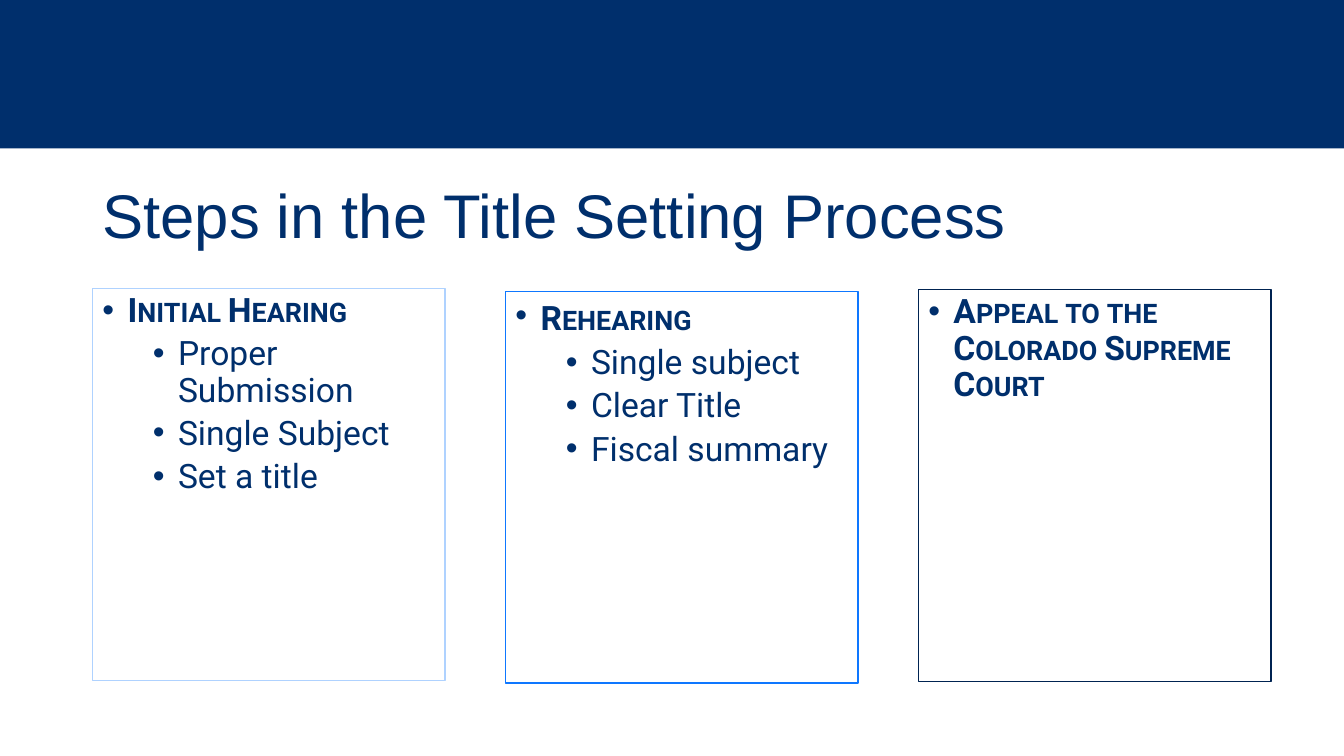
"""Build the slide on the steps in the title setting process."""
from lxml.etree import SubElement
from pptx import Presentation
from pptx.dml.color import RGBColor
from pptx.enum.shapes import MSO_SHAPE
from pptx.enum.text import MSO_ANCHOR, MSO_AUTO_SIZE, PP_ALIGN
from pptx.oxml.ns import qn
from pptx.util import Pt

COLORS = {
    "navy": "002F6C",
    "light blue": "AFD2FF",
    "bright blue": "0E77FF",
    "dark navy": "002351",
}
STEPS = [
    ("Initial Hearing", ["Proper Submission", "Single Subject", "Set a title"], "light blue", 206),
    ("Rehearing", ["Single subject", "Clear Title", "Fiscal summary"], "bright blue", 208),
    ("Appeal to the Colorado Supreme Court", [], "dark navy", 207),
]
LEFT, STEP_PITCH, STEP_WIDTH, STEP_HEIGHT = 66, 295, 252, 280


def place(shape, left, top, width, height):
    shape.left, shape.top, shape.width, shape.height = map(Pt, (left, top, width, height))


def format_bullet(paragraph, level, space_before):
    paragraph.level = level
    paragraph.line_spacing = 0.9
    paragraph.space_before = Pt(space_before)
    properties = paragraph._p.get_or_add_pPr()
    properties.set("marL", str(Pt(18 + 36 * level)))
    properties.set("indent", str(Pt(-18)))
    SubElement(properties, qn("a:buFont"), typeface="Arial")
    SubElement(properties, qn("a:buChar"), char="•")
    paragraph.font.name = "Roboto"
    paragraph.font.size = Pt(24)
    paragraph.font.bold = level == 0
    paragraph.font.color.rgb = RGBColor.from_string(COLORS["navy"])


presentation = Presentation()
presentation.slide_width, presentation.slide_height = Pt(960), Pt(540)
slide = presentation.slides.add_slide(presentation.slide_layouts.get_by_name("Two Content"))

band = slide.shapes.add_shape(MSO_SHAPE.RECTANGLE, Pt(0), Pt(0), Pt(960), Pt(106))
band.shadow.inherit = False
band.fill.solid()
band.fill.fore_color.rgb = RGBColor.from_string(COLORS["navy"])
band.line.fill.background()

title = slide.shapes.title
place(title, LEFT, 120, 828, 72)
title.text_frame.text = "Steps in the Title Setting Process"
title.text_frame.vertical_anchor = MSO_ANCHOR.MIDDLE
title.text_frame.auto_size = MSO_AUTO_SIZE.NONE
title_paragraph = title.text_frame.paragraphs[0]
title_paragraph.alignment = PP_ALIGN.LEFT
title_paragraph.line_spacing = 0.9
title_paragraph.font.name = "Arial"
title_paragraph.font.size = Pt(44)
title_paragraph.font.color.rgb = RGBColor.from_string(COLORS["navy"])

appeal_box = slide.shapes.add_textbox(Pt(0), Pt(0), Pt(STEP_WIDTH), Pt(STEP_HEIGHT))
step_boxes = [slide.placeholders[1], slide.placeholders[2], appeal_box]

for index, (box, (heading, details, outline, top)) in enumerate(zip(step_boxes, STEPS)):
    place(box, LEFT + index * STEP_PITCH, top, STEP_WIDTH, STEP_HEIGHT)
    box.line.color.rgb = RGBColor.from_string(COLORS[outline])
    box.line.width = Pt(1)
    text_frame = box.text_frame
    text_frame.word_wrap = True
    text_frame.auto_size = MSO_AUTO_SIZE.NONE

    heading_paragraph = text_frame.paragraphs[0]
    format_bullet(heading_paragraph, 0, 0)
    heading_run = heading_paragraph.add_run()
    heading_run.text = heading
    heading_run._r.get_or_add_rPr().set("cap", "small")
    if heading == "Rehearing":
        spacer_run = heading_paragraph.add_run()
        spacer_run.text = " "
        spacer_run.font.size = Pt(28)

    for detail in details:
        detail_paragraph = text_frame.add_paragraph()
        detail_paragraph.text = detail
        format_bullet(detail_paragraph, 1, 5)

presentation.save("out.pptx")
